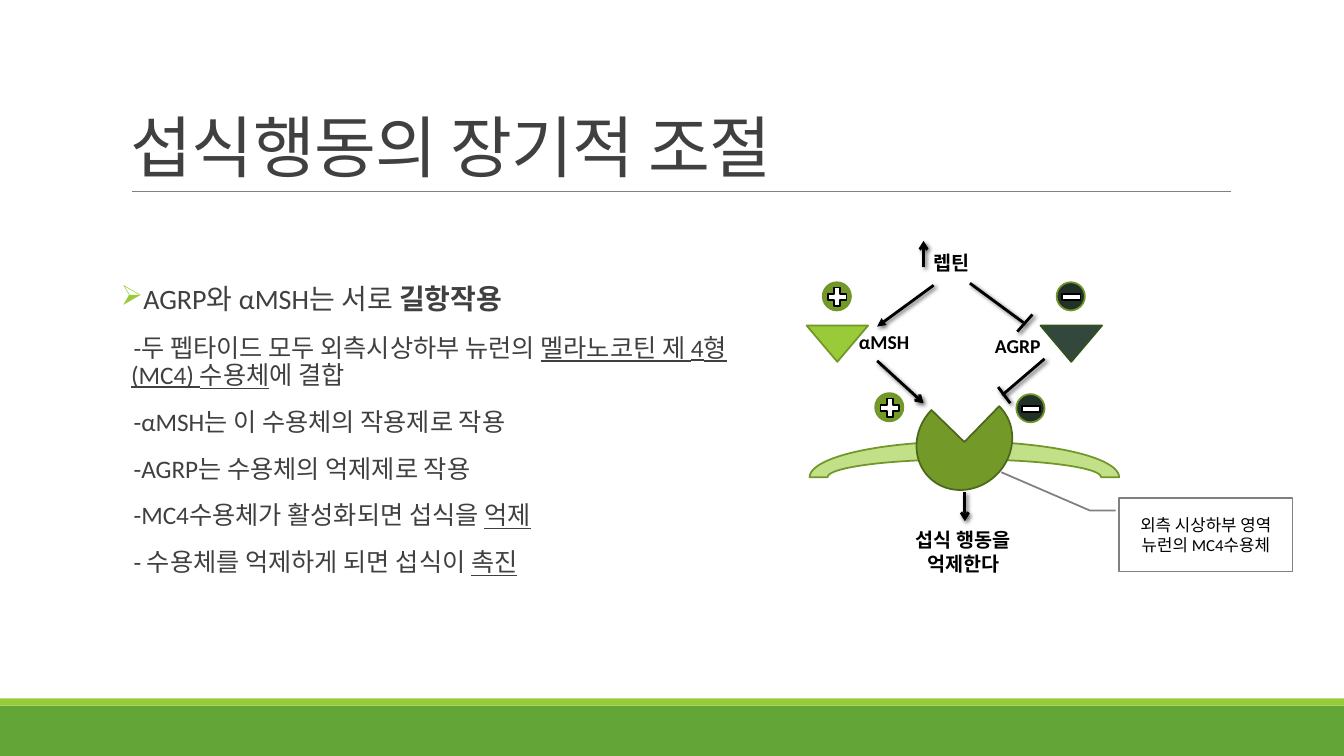
from dataclasses import dataclass

from lxml.etree import SubElement
from pptx import Presentation
from pptx.dml.color import RGBColor
from pptx.enum.shapes import MSO_CONNECTOR as Connector, MSO_SHAPE as Shape
from pptx.enum.text import MSO_ANCHOR as Anchor, PP_ALIGN as Align
from pptx.oxml.ns import qn
from pptx.util import Inches, Pt


@dataclass(frozen=True)
class Theme:
    font: str = "Calibri"
    text: str = "404040"
    black: str = "000000"
    white: str = "FFFFFF"
    gray: str = "808080"
    band: str = "63A537"
    lime: str = "99CB38"
    lime_edge: str = "719629"
    membrane: str = "C2E088"
    olive: str = "739A28"
    olive_edge: str = "4D671B"
    slate: str = "34473D"
    slate_edge: str = "31521C"
    dark: str = "223028"
    title_size: int = 48
    lead_size: int = 20
    body_size: int = 18
    label_size: int = 14
    callout_size: int = 12
    outline: float = 1.25
    arrow: float = 2


THEME = Theme()


def color(value):
    return RGBColor.from_string(value)


def style_run(run, size, fill, bold=False, underline=False):
    run.font.name = THEME.font
    run.font.size = Pt(size)
    run.font.color.rgb = color(fill)
    run.font.bold = bold
    run.font.underline = underline


def add_textbox(slide, box, text, size, fill=THEME.black, bold=True, align=Align.LEFT, wrap=False):
    shape = slide.shapes.add_textbox(*map(Inches, box))
    fill_text(shape.text_frame, text, size, fill, bold, align)
    shape.text_frame.word_wrap = wrap
    return shape.text_frame


def fill_text(text_frame, text, size, fill, bold, align):
    text_frame.text = text
    for paragraph in text_frame.paragraphs:
        paragraph.alignment = align
        for run in paragraph.runs:
            style_run(run, size, fill, bold)


def add_figure(slide, kind, box, fill, line=None, rotation=0):
    shape = slide.shapes.add_shape(kind, *map(Inches, box))
    shape.shadow.inherit = False
    shape.rotation = rotation
    shape.fill.solid()
    shape.fill.fore_color.rgb = color(fill)
    if line:
        shape.line.color.rgb = color(line)
        shape.line.width = Pt(THEME.outline)
    else:
        shape.line.fill.background()
    return shape


def add_line(slide, start, end, line, width, head=None, shadow=False):
    connector = slide.shapes.add_connector(Connector.STRAIGHT, *map(Inches, (*start, *end)))
    connector.line.color.rgb = color(line)
    connector.line.width = Pt(width)
    properties = connector._element.spPr
    if head:
        SubElement(properties.find(qn("a:ln")), qn("a:tailEnd"), type=head)
    effects = SubElement(properties, qn("a:effectLst"))
    if shadow:
        outer = SubElement(effects, qn("a:outerShdw"), blurRad=str(Pt(3)), dist=str(Pt(2)),
                           dir="2700000", algn="tl", rotWithShape="0")
        tint = SubElement(outer, qn("a:srgbClr"), val=THEME.black)
        SubElement(tint, qn("a:alpha"), val="60000")


def set_bullet(paragraph, character):
    properties = paragraph._p.get_or_add_pPr()
    properties.set("marL", str(Inches(0.1)))
    properties.set("indent", str(-Inches(0.1)))
    bullet_color = SubElement(properties, qn("a:buClr"))
    SubElement(bullet_color, qn("a:srgbClr"), val=THEME.lime)
    SubElement(properties, qn("a:buChar"), char=character)


def add_badge(slide, left, top, sign):
    fill = THEME.olive if sign == Shape.MATH_PLUS else THEME.dark
    add_figure(slide, Shape.FLOWCHART_CONNECTOR, (left, top, 0.28, 0.28), fill, THEME.lime_edge)
    add_figure(slide, sign, (left + 0.02, top + 0.02, 0.25, 0.25), THEME.white, THEME.black)


def add_frame(slide):
    add_figure(slide, Shape.RECTANGLE, (0, 7, 13.33, 0.5), THEME.band)
    add_figure(slide, Shape.RECTANGLE, (0, 6.93, 13.33, 0.07), THEME.lime)
    add_line(slide, (1.31, 1.9), (12.21, 1.9), THEME.gray, 0.5)
    title = add_textbox(slide, (1.2, 0.31, 11, 1.59), "섭식행동의 장기적 조절",
                        THEME.title_size, THEME.text, bold=False, wrap=True)
    title.vertical_anchor = Anchor.BOTTOM
    title.paragraphs[0].line_spacing = 0.85
    title.paragraphs[0].runs[0]._r.get_or_add_rPr().set("spc", "-50")


def add_body(slide):
    lines = [
        ("-두 펩타이드 모두 외측시상하부 뉴런의 ", "멜라노코틴 제 4형(MC4) 수용체", "에 결합"),
        ("-αMSH는 이 수용체의 작용제로 작용",),
        ("-AGRP는 수용체의 억제제로 작용",),
        ("-MC4수용체가 활성화되면 섭식을 ", "억제"),
        ("- 수용체를 억제하게 되면 섭식이 ", "촉진"),
    ]
    text_frame = slide.shapes.add_textbox(*map(Inches, (1.2, 2.17, 6.51, 4.22))).text_frame
    text_frame.word_wrap = True
    text_frame.vertical_anchor = Anchor.MIDDLE
    text_frame.margin_left = text_frame.margin_right = 0
    for number, parts in enumerate([("AGRP와 αMSH는 서로 ", "길항작용"), *lines]):
        lead = number == 0
        paragraph = text_frame.paragraphs[0] if lead else text_frame.add_paragraph()
        paragraph.line_spacing = 0.9
        paragraph.space_before = Pt(12)
        paragraph.space_after = Pt(2)
        set_bullet(paragraph, "➢" if lead else " ")
        for position, part in enumerate(parts):
            run = paragraph.add_run()
            run.text = part
            key = position == 1
            style_run(run, THEME.lead_size if lead else THEME.body_size, THEME.text,
                      bold=key and lead, underline=key and not lead)


def add_receptor(slide):
    add_figure(slide, Shape.BLOCK_ARC, (8.03, 4.38, 3.07, 0.71), THEME.membrane, THEME.lime_edge)
    add_figure(slide, Shape.PIE, (9.07, 3.93, 0.99, 0.91), THEME.olive, THEME.olive_edge, 314.2)
    callout = add_figure(slide, Shape.LINE_CALLOUT_2, (11.1, 4.94, 1.72, 0.73), THEME.white, THEME.gray)
    for index, value in enumerate((0.168, -0.017, 0.168, -0.168, -0.355, -0.683)):
        callout.adjustments[index] = round(value, 2)
    callout.text_frame.vertical_anchor = Anchor.MIDDLE
    fill_text(callout.text_frame, "외측 시상하부 영역\n뉴런의 MC4수용체",
              THEME.callout_size, THEME.black, False, Align.CENTER)


def add_pathways(slide):
    arrows = [
        ((8.7, 3.58), (9.16, 4), "arrow"),
        ((9.16, 2.65), (9.16, 2.39), "arrow"),
        ((9.26, 2.83), (8.7, 3.24), "triangle"),
        ((9.57, 4.88), (9.57, 5.17), "arrow"),
        ((10.15, 3.2), (9.62, 2.81), None),
        ((10.24, 3.12), (10.09, 3.29), None),
        ((10.36, 3.56), (9.94, 3.92), None),
        ((9.9, 3.84), (10.02, 4), None),
    ]
    for start, end, head in arrows:
        add_line(slide, start, end, THEME.black, THEME.arrow, head, shadow=True)
    for left, fill, line in ((8, THEME.lime, THEME.lime_edge), (10.32, THEME.slate, THEME.slate_edge)):
        add_figure(slide, Shape.FLOWCHART_MERGE, (left, 3.23, 0.61, 0.36), fill, line)
    for left, top, sign in (
        (8.16, 2.8, Shape.MATH_PLUS),
        (8.68, 3.9, Shape.MATH_PLUS),
        (10.48, 2.8, Shape.MATH_MINUS),
        (10.08, 3.91, Shape.MATH_MINUS),
    ):
        add_badge(slide, left, top, sign)
    for box, text, align in (
        ((9.16, 2.44, 0.59, 0.34), "렙틴", Align.LEFT),
        ((8.42, 3.22, 0.71, 0.34), "αMSH", Align.LEFT),
        ((9.77, 3.26, 0.66, 0.34), "AGRP", Align.LEFT),
        ((8.94, 5.19, 1.23, 0.57), "섭식 행동을\n억제한다", Align.CENTER),
    ):
        add_textbox(slide, box, text, THEME.label_size, align=align)


def main():
    presentation = Presentation()
    presentation.slide_width = Inches(13.33)
    presentation.slide_height = Inches(7.5)
    slide = presentation.slides.add_slide(presentation.slide_layouts[6])
    add_frame(slide)
    add_body(slide)
    add_receptor(slide)
    add_pathways(slide)
    presentation.save("out.pptx")


if __name__ == "__main__":
    main()
